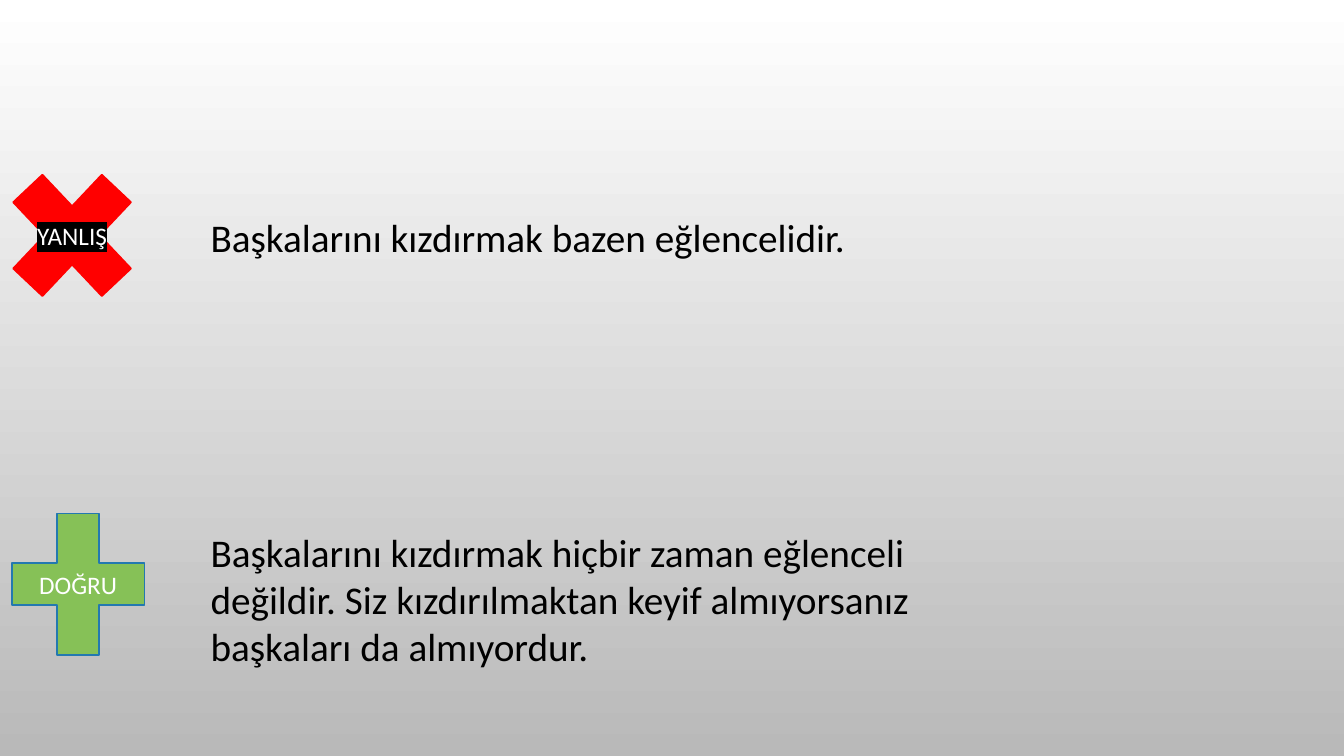
from dataclasses import dataclass

from lxml import etree
from pptx import Presentation
from pptx import util as u
from pptx.dml.color import RGBColor
from pptx.enum import shapes, text
from pptx.oxml import ns

BLACK = RGBColor(0x00, 0x00, 0x00)
WHITE = RGBColor(0xFF, 0xFF, 0xFF)
GRAY = RGBColor(0xB9, 0xB9, 0xB9)
RED = RGBColor(0xFF, 0x00, 0x00)
GREEN = RGBColor(0x86, 0xC1, 0x57)
BLUE = RGBColor(0x23, 0x79, 0xB0)
FACE = "Calibri"


@dataclass
class Box:
    left: float
    top: float
    width: float
    height: float

    def place(self) -> tuple:
        return tuple(map(u.Inches, (self.left, self.top, self.width, self.height)))


@dataclass
class Mark:
    kind: shapes.MSO_SHAPE
    box: Box
    label: str
    fill: RGBColor
    line: RGBColor
    glow: RGBColor | None = None


@dataclass
class Claim:
    box: Box
    words: str


ROWS = [
    (
        Mark(shapes.MSO_SHAPE.MATH_MULTIPLY, Box(-0.13, 1.44, 1.69, 1.79),
             "YANLIŞ", RED, RED, BLACK),
        Claim(Box(1.99, 2.07, 8.79, 0.57),
              "Başkalarını kızdırmak bazen eğlencelidir."),
    ),
    (
        Mark(shapes.MSO_SHAPE.MATH_PLUS, Box(-0.12, 4.84, 1.79, 1.91),
             "DOĞRU", GREEN, BLUE),
        Claim(Box(1.99, 5.19, 7.16, 1.99),
              "Başkalarını kızdırmak hiçbir zaman eğlenceli değildir. "
              "Siz kızdırılmaktan keyif almıyorsanız başkaları da almıyordur."),
    ),
]


def write(frame, words: str, size: int, color: RGBColor):
    frame.word_wrap = True
    para = frame.paragraphs[0]
    run = para.add_run()
    run.text = words
    para.font.name = FACE
    para.font.size = u.Pt(size)
    para.font.color.rgb = color
    return run


def shade(run, color: RGBColor) -> None:
    props = run.font._element
    light = etree.SubElement(props, ns.qn("a:highlight"))
    etree.SubElement(light, ns.qn("a:srgbClr"), val=str(color))


def draw_mark(slide, mark: Mark) -> None:
    shape = slide.shapes.add_shape(mark.kind, *mark.box.place())
    shape.shadow.inherit = False
    shape.fill.solid()
    shape.fill.fore_color.rgb = mark.fill
    shape.line.color.rgb = mark.line
    shape.line.width = u.Pt(1.25)
    frame = shape.text_frame
    run = write(frame, mark.label, 18, WHITE)
    frame.vertical_anchor = text.MSO_ANCHOR.MIDDLE
    frame.paragraphs[0].alignment = text.PP_ALIGN.CENTER
    if mark.glow is not None:
        shade(run, mark.glow)


def draw_claim(slide, claim: Claim) -> None:
    frame = slide.shapes.add_textbox(*claim.box.place()).text_frame
    write(frame, claim.words, 28, BLACK)
    frame.auto_size = text.MSO_AUTO_SIZE.SHAPE_TO_FIT_TEXT


def paint(slide) -> None:
    fill = slide.background.fill
    fill.gradient()
    fill.gradient_angle = 270
    for stop, color in zip(fill.gradient_stops, (WHITE, GRAY)):
        stop.color.rgb = color


def main() -> None:
    deck = Presentation()
    deck.slide_width = u.Inches(13.33)
    deck.slide_height = u.Inches(7.5)
    slide = deck.slides.add_slide(deck.slide_layouts[6])
    paint(slide)
    for mark, claim in ROWS:
        draw_mark(slide, mark)
        draw_claim(slide, claim)
    deck.save("out.pptx")


if __name__ == "__main__":
    main()
